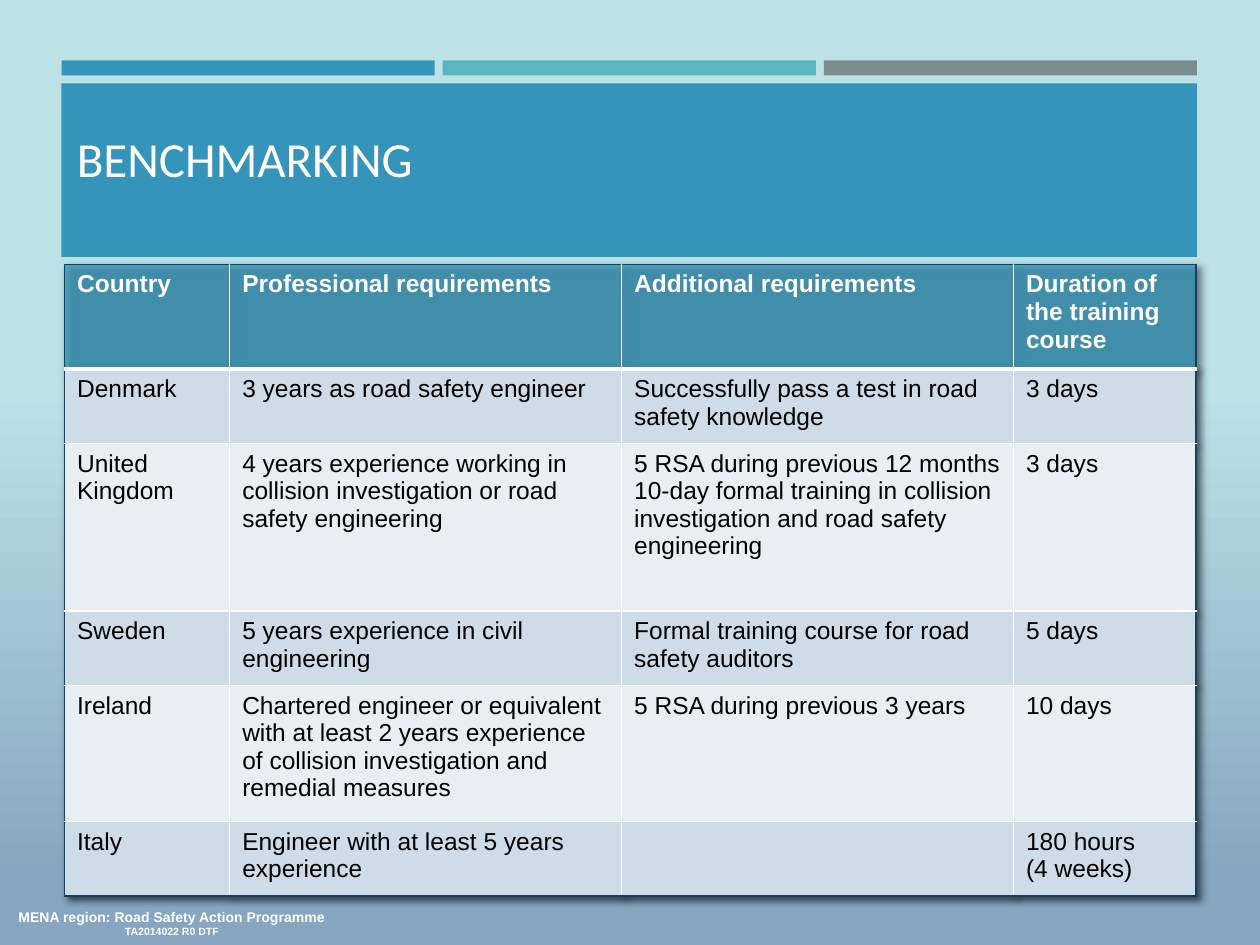
"""Build the road safety benchmarking slide."""
import pptx
import pptx.dml.color
import pptx.enum.shapes
import pptx.enum.text
import pptx.oxml
import pptx.oxml.ns
import pptx.util

Cm = pptx.util.Cm
ANCHOR = pptx.enum.text.MSO_ANCHOR
ALIGN = pptx.enum.text.PP_ALIGN

THEME = {
    "blue": "3494BA", "teal": "58B6C0", "grey": "7A8C8E",
    "white": "FFFFFF", "black": "000000", "edge": "134163",
    "bands": ("CEDCE7", "E8EEF3"),
    "sky": ((0.07, "86A6C1"), (0.59, "BCE2E6")),
    "title": {"name": "Calibri", "size": 28, "bold": False},
    "head": {"name": "Arial", "size": 14, "bold": True},
    "body": {"name": "Arial", "size": 14, "bold": False},
    "foot": {"name": "Arial", "size": 8, "bold": True},
    "code": {"name": "Arial", "size": 6, "bold": True},
}
TITLE = "BENCHMARKING"
FOOT = (("MENA region: Road Safety Action Programme", "foot"),
        ("TA2014022 R0 DTF", "code"))
ROWS = (
    ("Country", "Professional requirements", "Additional requirements",
     "Duration of the training course"),
    ("Denmark", "3 years as road safety engineer",
     "Successfully pass a test in road safety knowledge", "3 days"),
    ("United Kingdom",
     "4 years experience working in collision investigation or road safety engineering",
     "5 RSA during previous 12 months\n"
     "10-day formal training in collision investigation and road safety engineering",
     "3 days"),
    ("Sweden", "5 years experience in civil engineering",
     "Formal training course for road safety auditors", "5 days"),
    ("Ireland",
     "Chartered engineer or equivalent with at least 2 years experience "
     "of collision investigation and remedial measures",
     "5 RSA during previous 3 years", "10 days"),
    ("Italy", "Engineer with at least 5 years experience", "",
     "180 hours\n(4 weeks)"),
)
WIDTHS = (3.33, 7.9, 7.9, 3.68)
HEIGHTS = (2.11, 1.5, 3.38, 1.5, 2.74, 1.5)
LEFT, SPAN, GAP = 1.24, 22.89, 0.16


def tint(code):
    """Return an RGB colour for a hex code."""
    return pptx.dml.color.RGBColor.from_string(code)


def node(text):
    """Parse a drawing element from its markup."""
    space = pptx.oxml.ns.nsdecls("a")
    return pptx.oxml.parse_xml(f"<a:wrap {space}>{text}</a:wrap>")[0]


def style(run, kind, color):
    """Apply a theme type style to a run."""
    form = {**THEME[kind], "size": pptx.util.Pt(THEME[kind]["size"])}
    for key, value in form.items():
        setattr(run.font, key, value)
    run.font.color.rgb = tint(THEME[color])


def block(slide, box, color):
    """Draw a plain filled rectangle."""
    kind = pptx.enum.shapes.MSO_SHAPE.RECTANGLE
    shape = slide.shapes.add_shape(kind, *map(Cm, box))
    shape.shadow.inherit = False
    shape.fill.solid()
    shape.fill.fore_color.rgb = tint(THEME[color])
    shape.line.fill.background()


def label(slide, box, parts, anchor, form):
    """Add a text box whose styled lines share one paragraph."""
    frame = slide.shapes.add_textbox(*map(Cm, box)).text_frame
    frame.word_wrap = True
    frame.vertical_anchor = anchor
    para = frame.paragraphs[0]
    for key, value in form.items():
        setattr(para, key, value)
    for i, (text, kind) in enumerate(parts):
        if i:
            para.add_line_break()
        run = para.add_run()
        run.text = text
        style(run, kind, "white")


def border(cell, row, col):
    """Set the four borders of a cell from its place in the grid."""
    outer = {"L": col == 0, "R": col == len(WIDTHS) - 1,
             "T": row == 0, "B": row == len(ROWS) - 1}
    props = cell._tc.get_or_add_tcPr()
    for i, (side, edge) in enumerate(outer.items()):
        thick = (side, row) in (("B", 0), ("T", 1))
        color = THEME["edge" if edge else "white"]
        props.insert(i, node(
            f'<a:ln{side} w="{38100 if thick else 12700}"><a:solidFill>'
            f'<a:srgbClr val="{color}"/></a:solidFill></a:ln{side}>'))


def paint(cell, row):
    """Fill a cell with the header or band colour."""
    cell.fill.solid()
    code = THEME["bands"][(row - 1) % 2] if row else THEME["blue"]
    cell.fill.fore_color.rgb = tint(code)
    if not row:
        mark = cell._tc.tcPr.find(".//" + pptx.oxml.ns.qn("a:srgbClr"))
        mark.append(node('<a:alpha val="74000"/>'))


def grid(slide):
    """Add the country table."""
    box = (1.3, 5.33, sum(WIDTHS), sum(HEIGHTS))
    table = slide.shapes.add_table(len(ROWS), len(WIDTHS), *map(Cm, box)).table
    table._tbl.tblPr.insert(0, node(
        '<a:effectLst><a:outerShdw blurRad="50800" dist="38100" dir="2700000">'
        f'<a:srgbClr val="{THEME["black"]}"><a:alpha val="60000"/></a:srgbClr>'
        '</a:outerShdw></a:effectLst>'))
    for col, width in zip(table.columns, WIDTHS):
        col.width = Cm(width)
    for r, (line, height) in enumerate(zip(ROWS, HEIGHTS)):
        table.rows[r].height = Cm(height)
        for c, text in enumerate(line):
            cell = table.cell(r, c)
            cell.text = text
            for para in cell.text_frame.paragraphs:
                for run in para.runs:
                    style(run, "body" if r else "head", "black" if r else "white")
            paint(cell, r)
            border(cell, r, c)


def main():
    """Build and save the slide."""
    deck = pptx.Presentation()
    deck.slide_width, deck.slide_height = Cm(25.4), Cm(19.05)
    slide = deck.slides.add_slide(deck.slide_layouts[6])
    back = slide.background.fill
    back.gradient()
    back.gradient_angle = 90
    for stop, (place, code) in zip(back.gradient_stops, THEME["sky"]):
        stop.position = place
        stop.color.rgb = tint(code)
    colors = ("blue", "teal", "grey")
    width = (SPAN - GAP * (len(colors) - 1)) / len(colors)
    for i, color in enumerate(colors):
        block(slide, (LEFT + i * (width + GAP), 1.22, width, 0.3), color)
    block(slide, (LEFT, 1.68, SPAN, 3.5), "blue")
    small = pptx.util.Pt(3)
    label(slide, (0.05, 18.19, 6.83, 0.86), FOOT, ANCHOR.TOP,
          {"alignment": ALIGN.CENTER, "space_before": small, "space_after": small})
    label(slide, (1.3, 1.9, 22.5, 2.01), ((TITLE, "title"),), ANCHOR.BOTTOM,
          {"alignment": ALIGN.LEFT})
    grid(slide)
    deck.save("out.pptx")


if __name__ == "__main__":
    main()
